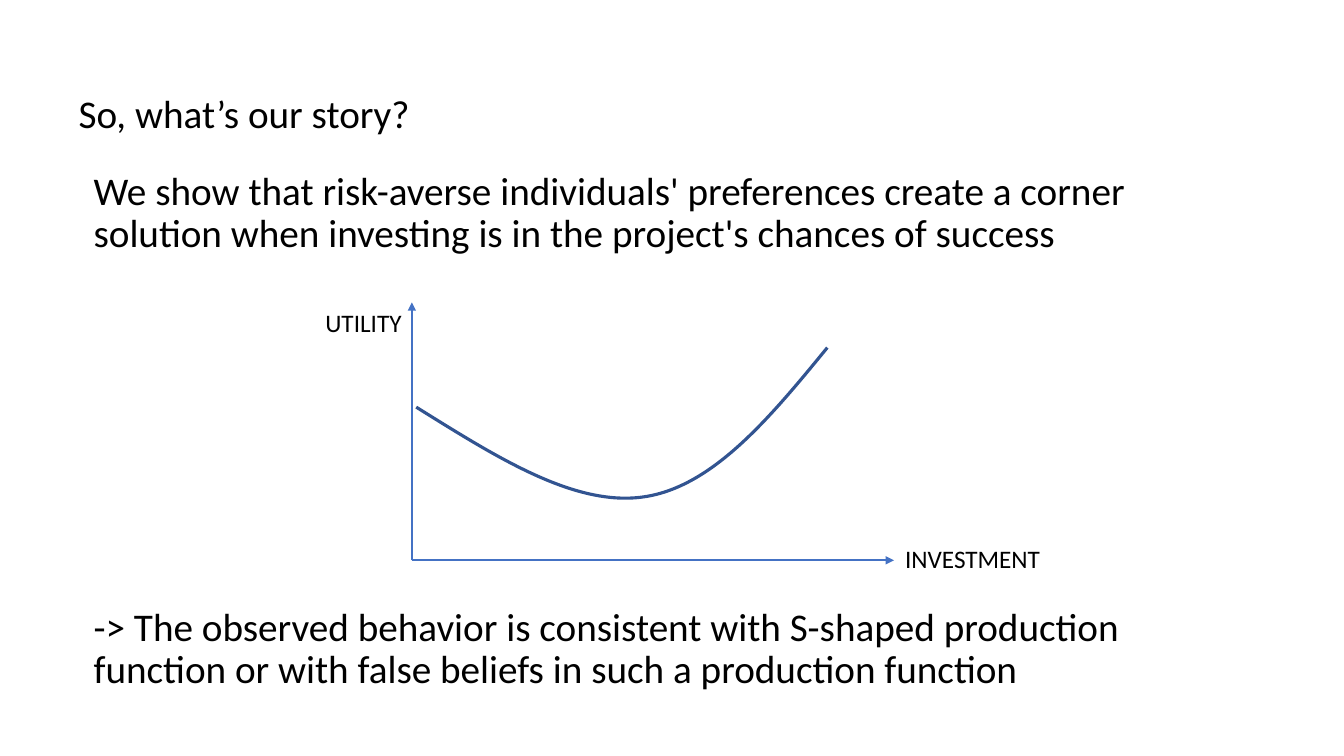
from dataclasses import dataclass

from lxml.etree import SubElement
from pptx import Presentation
from pptx.dml.color import RGBColor
from pptx.enum.shapes import MSO_CONNECTOR
from pptx.enum.text import MSO_ANCHOR as Anchor, MSO_AUTO_SIZE as AutoSize
from pptx.oxml.ns import qn
from pptx.slide import Slide
from pptx.util import Cm, Pt

BLACK = RGBColor(0x00, 0x00, 0x00)
AXIS_BLUE = RGBColor(0x44, 0x72, 0xC4)
CURVE_BLUE = RGBColor(0x32, 0x54, 0x91)
FONT = "Calibri"

Point = tuple[float, float]


@dataclass(frozen=True)
class TextBlock:
    """Text in a box; lengths in cm, sizes and paragraph gap in points."""
    paragraphs: tuple[str, ...]
    left: float
    top: float
    width: float
    height: float
    size: int = 28
    line_spacing: float = 0.9
    gap: int = 0
    anchor: Anchor = Anchor.TOP
    auto_size: AutoSize = AutoSize.NONE


@dataclass(frozen=True)
class Axis:
    start: Point
    tip: Point


def axis_label(text: str, left: float, top: float) -> TextBlock:
    return TextBlock((text,), left, top, 4.06, 1.02, size=18, line_spacing=1.0,
                     auto_size=AutoSize.SHAPE_TO_FIT_TEXT)


TITLE = TextBlock(("So, what’s our story?",), 1.73, 1.65, 30.4, 2.54,
                  anchor=Anchor.MIDDLE)
# The gap between the two statements leaves room for the graph.
STATEMENTS = TextBlock(
    ("We show that risk-averse individuals' preferences create a corner "
     "solution when investing is in the project's chances of success",
     "-> The observed behavior is consistent with S-shaped production "
     "function or with false beliefs in such a production function"),
    2.11, 4.19, 29.21, 13.59, gap=251)
LABELS = (axis_label("INVESTMENT", 22.56, 13.56),
          axis_label("UTILITY", 7.95, 7.62))

ORIGIN = (10.38, 14.12)
AXES = (Axis(ORIGIN, (22.53, ORIGIN[1])), Axis(ORIGIN, (ORIGIN[0], 7.62)))

# Start point, then three Bézier points for each of the two curve segments.
UTILITY_CURVE: tuple[Point, ...] = (
    (10.49, 10.26),
    (12.5, 11.51), (14.48, 12.78), (16.23, 12.52),
    (17.96, 12.27), (19.41, 10.52), (20.85, 8.76),
)


def add_text(slide: Slide, block: TextBlock) -> None:
    box = slide.shapes.add_textbox(Cm(block.left), Cm(block.top),
                                   Cm(block.width), Cm(block.height))
    frame = box.text_frame
    frame.word_wrap = True
    frame.auto_size = block.auto_size
    frame.vertical_anchor = block.anchor
    for index, text in enumerate(block.paragraphs):
        paragraph = frame.add_paragraph() if index else frame.paragraphs[0]
        paragraph.line_spacing = block.line_spacing
        if index:
            paragraph.space_before = Pt(block.gap)
        run = paragraph.add_run()
        run.text = text
        run.font.name = FONT
        run.font.size = Pt(block.size)
        run.font.color.rgb = BLACK


def add_axis(slide: Slide, axis: Axis) -> None:
    ends = [Cm(value) for value in axis.start + axis.tip]
    arrow = slide.shapes.add_connector(MSO_CONNECTOR.STRAIGHT, *ends)
    arrow.line.color.rgb = AXIS_BLUE
    arrow.line.width = Pt(1.5)
    properties = arrow._element.spPr
    SubElement(properties.find(qn("a:ln")), qn("a:tailEnd"), type="triangle")
    SubElement(properties, qn("a:effectLst"))


def add_bezier(slide: Slide, points: tuple[Point, ...]) -> None:
    """Draw a smooth open line: a start point, then triples of Bézier points."""
    start, *controls = [(Cm(x), Cm(y)) for x, y in points]
    builder = slide.shapes.build_freeform(*start)
    builder.add_line_segments(controls, close=False)
    curve = builder.convert_to_shape()
    curve.shadow.inherit = False
    curve.fill.background()
    curve.line.color.rgb = CURVE_BLUE
    curve.line.width = Pt(2.25)

    outline = next(curve._element.iter(qn("a:path")))
    segments = outline.findall(qn("a:lnTo"))
    for first in range(0, len(segments), 3):
        bezier = SubElement(outline, qn("a:cubicBezTo"))
        for segment in segments[first:first + 3]:
            bezier.append(segment[0])
            outline.remove(segment)


def main() -> None:
    presentation = Presentation()
    presentation.slide_width = Cm(33.87)
    presentation.slide_height = Cm(19.05)
    slide = presentation.slides.add_slide(presentation.slide_layouts[6])

    for axis in AXES:
        add_axis(slide, axis)
    add_bezier(slide, UTILITY_CURVE)
    for block in (*LABELS, STATEMENTS, TITLE):
        add_text(slide, block)

    presentation.save("out.pptx")


if __name__ == "__main__":
    main()
